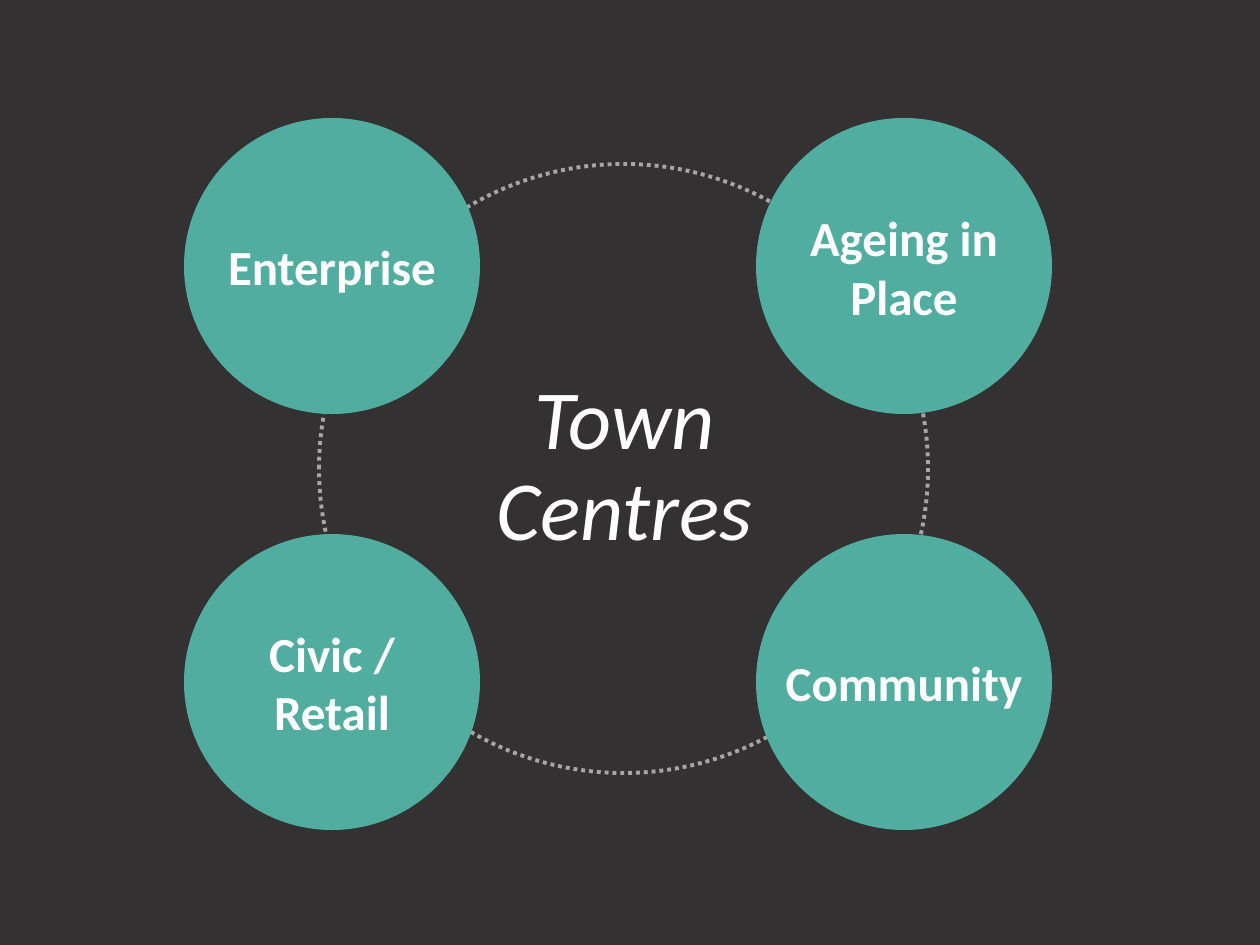
from dataclasses import dataclass

from pptx import Presentation
from pptx.dml.color import RGBColor as RGB
from pptx.enum.dml import MSO_LINE
from pptx.enum.shapes import MSO_SHAPE
from pptx.enum.text import MSO_ANCHOR, MSO_AUTO_SIZE, PP_ALIGN
from pptx.util import Pt

PX = 914400 / 126
TITLE_ONLY = 5


@dataclass(frozen=True)
class Theme:
    back: RGB = RGB(0x33, 0x31, 0x32)
    circle: RGB = RGB(0x50, 0xAD, 0x9F)
    ring: RGB = RGB(0xA6, 0xA6, 0xA6)
    text: RGB = RGB(0xFF, 0xFF, 0xFF)
    font: str = "Calibri"
    title_size: int = 48
    label_size: int = 28
    ring_width: float = 2.25


THEME = Theme()


def emu(*lengths):
    return [round(n * PX) for n in lengths]


def write(sp, text, size, bold=False, italic=False, wrap=True, spacing=1.0):
    """Put one centred run into a shape that has no text margins."""
    tf = sp.text_frame
    tf.auto_size = MSO_AUTO_SIZE.NONE
    tf.word_wrap = wrap
    tf.vertical_anchor = MSO_ANCHOR.MIDDLE
    tf.margin_left = tf.margin_top = tf.margin_right = tf.margin_bottom = 0
    p = tf.paragraphs[0]
    p.alignment = PP_ALIGN.CENTER
    p.line_spacing = spacing
    r = p.add_run()
    r.text = text
    r.font.name = THEME.font
    r.font.size = Pt(size)
    r.font.bold = bold
    r.font.italic = italic
    r.font.color.rgb = THEME.text


def add_circle(s, x, y, size):
    sp = s.shapes.add_shape(MSO_SHAPE.OVAL, *emu(x, y, size, size))
    sp.shadow.inherit = False
    return sp


def add_ring(s, x, y, size):
    sp = add_circle(s, x, y, size)
    sp.fill.background()
    sp.line.color.rgb = THEME.ring
    sp.line.width = Pt(THEME.ring_width)
    sp.line.dash_style = MSO_LINE.ROUND_DOT


def place_title(s, x, y, w, h, text):
    title = s.shapes.title
    title.left, title.top, title.width, title.height = emu(x, y, w, h)
    write(title, text, THEME.title_size, italic=True, spacing=0.9)


def add_topics(s, x, y, w, h, size, rows):
    """Spread rows of equal circles to the edges of the box."""
    row_step = (h - size) / (len(rows) - 1)
    for i, row in enumerate(rows):
        col_step = (w - size) / (len(row) - 1)
        for j, label in enumerate(row):
            sp = add_circle(s, x + j * col_step, y + i * row_step, size)
            sp.fill.solid()
            sp.fill.fore_color.rgb = THEME.circle
            sp.line.fill.background()
            write(sp, label, THEME.label_size, bold=True, wrap=" " in label)


def main():
    prs = Presentation()
    prs.slide_width, prs.slide_height = emu(1260, 945)
    s = prs.slides.add_slide(prs.slide_layouts[TITLE_ONLY])
    s.background.fill.solid()
    s.background.fill.fore_color.rgb = THEME.back

    place_title(s, 459, 331, 331, 273, "Town Centres")
    add_ring(s, 319, 164, 609)
    add_topics(s, 184, 118, 868, 712, 296, [
        ("Enterprise", "Ageing in Place"),
        ("Civic / Retail", "Community"),
    ])
    prs.save("out.pptx")


if __name__ == "__main__":
    main()
